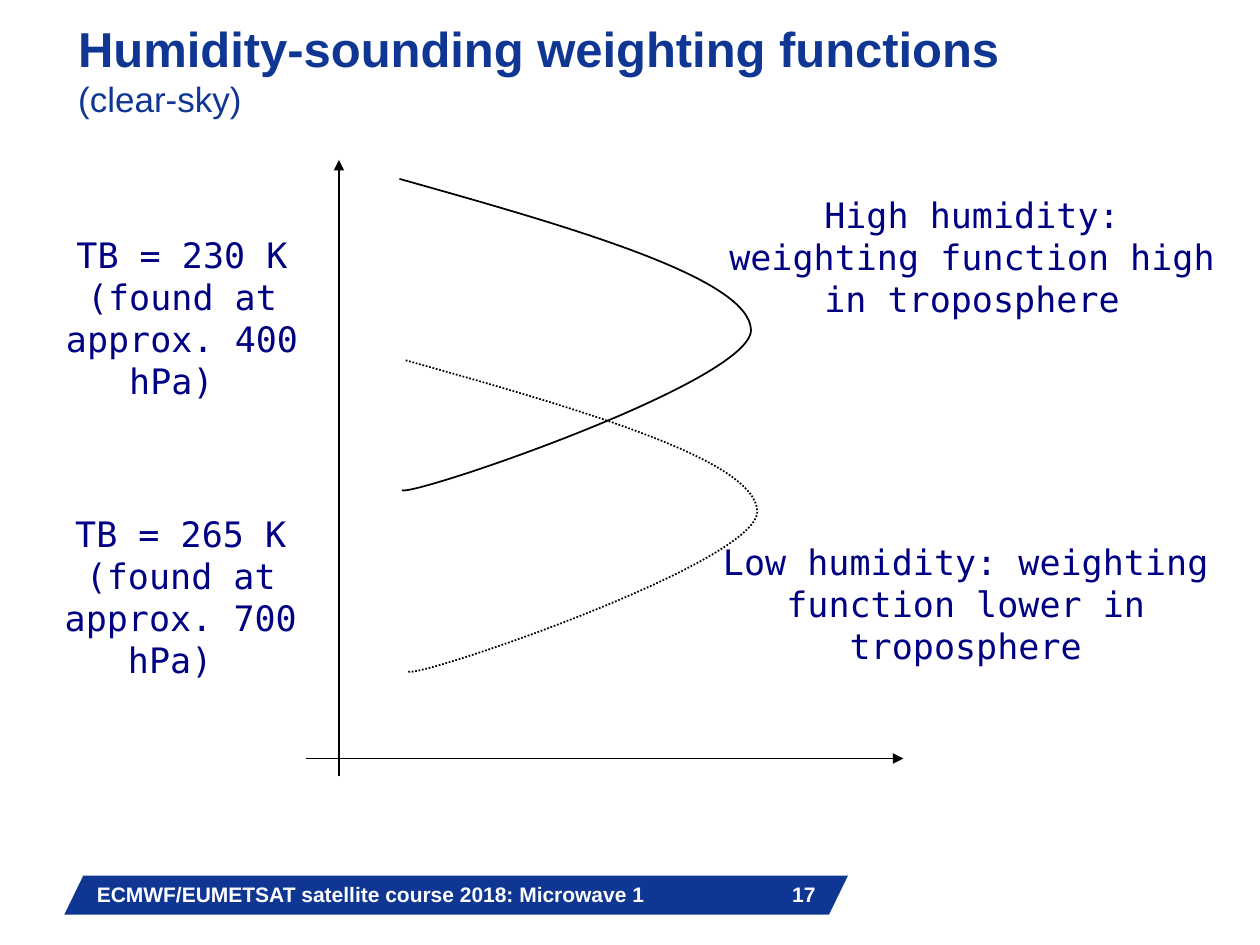
from lxml.etree import SubElement
from pptx import Presentation
from pptx.dml.color import RGBColor
from pptx.enum.dml import MSO_LINE
from pptx.enum.shapes import MSO_CONNECTOR, MSO_SHAPE
from pptx.enum.text import MSO_ANCHOR, MSO_AUTO_SIZE, PP_ALIGN
from pptx.oxml.ns import qn
from pptx.util import Inches, Pt

COLORS = {"brand": "0F3692", "label": "000082", "line": "000000", "light": "FFFFFF"}
CURVE_START = (3.17, 1.42)
CURVE_SEGMENTS = [
    [(4.56, 1.81), (5.95, 2.21), (5.96, 2.62)],
    [(5.96, 3.03), (3.25, 3.95), (3.19, 3.89)],
]
AXES = [((2.69, 6.16), (2.69, 1.27)), ((2.43, 6.02), (7.17, 6.02))]
LABELS = [
    ("High humidity: weighting function high in troposphere", 5.63, 1.49, 4.17, 0.77),
    ("Low humidity: weighting function lower in troposphere", 5.58, 4.24, 4.17, 0.77),
    ("TB = 230 K (found at approx. 400 hPa) ", 0.33, 1.8, 2.23, 1.45),
    ("TB = 265 K (found at approx. 700 hPa) ", 0.32, 4.02, 2.23, 1.45),
]


def color(name):
    return RGBColor.from_string(COLORS[name])


def add_run(paragraph, text, size=20, font="Arial", fill="brand", bold=False):
    run = paragraph.add_run()
    run.text = text
    run.font.size = Pt(size)
    run.font.name = font
    run.font.bold = bold
    run.font.color.rgb = color(fill)


def add_text(slide, text, left, top, width, height, align=PP_ALIGN.LEFT, **style):
    box = slide.shapes.add_textbox(Inches(left), Inches(top), Inches(width), Inches(height))
    box.text_frame.word_wrap = True
    paragraph = box.text_frame.paragraphs[0]
    paragraph.alignment = align
    add_run(paragraph, text, **style)


def set_title(slide):
    title = slide.shapes.title
    title.left, title.top = Inches(0.52), Inches(0.16)
    title.width, title.height = Inches(8.87), Inches(0.77)
    frame = title.text_frame
    frame.auto_size = MSO_AUTO_SIZE.NONE
    frame.vertical_anchor = MSO_ANCHOR.MIDDLE
    paragraph = frame.paragraphs[0]
    paragraph.alignment = PP_ALIGN.LEFT
    add_run(paragraph, "Humidity-sounding weighting functions ", size=28, bold=True)
    paragraph.add_line_break()
    add_run(paragraph, "(clear-sky)")


def add_footer(slide):
    band = slide.shapes.add_shape(
        MSO_SHAPE.PARALLELOGRAM, Inches(0.51), Inches(6.95), Inches(6.22), Inches(0.31)
    )
    band.adjustments[0] = 0.487
    band.shadow.inherit = False
    band.fill.solid()
    band.fill.fore_color.rgb = color("brand")
    band.line.fill.background()
    style = {"size": 12, "fill": "light", "bold": True}
    add_text(slide, "ECMWF/EUMETSAT satellite course 2018: Microwave 1", 0.67, 6.95, 4.65, 0.43, **style)
    add_text(slide, "17", 5.39, 6.95, 1.18, 0.43, align=PP_ALIGN.RIGHT, **style)


def add_axis(slide, start, end):
    axis = slide.shapes.add_connector(
        MSO_CONNECTOR.STRAIGHT, *(Inches(value) for value in start + end)
    )
    axis.line.color.rgb = color("line")
    axis.line.width = Pt(1)
    SubElement(axis.line._get_or_add_ln(), qn("a:tailEnd"), type="triangle")
    SubElement(axis._element.spPr, qn("a:effectLst"))


def bend_segments(curve, segments):
    outline = next(curve._element.iter(qn("a:path")))
    for straight in outline.findall(qn("a:lnTo")):
        outline.remove(straight)
    for segment in segments:
        bend = SubElement(outline, qn("a:cubicBezTo"))
        for x, y in segment:
            SubElement(bend, qn("a:pt"), x=str(x - curve.left), y=str(y - curve.top))


def add_weighting_curve(slide, shift_x=0, shift_y=0, dash=None):
    def place(point):
        return Inches(point[0] + shift_x), Inches(point[1] + shift_y)

    segments = [[place(point) for point in segment] for segment in CURVE_SEGMENTS]
    builder = slide.shapes.build_freeform(*place(CURVE_START))
    builder.add_line_segments([segment[-1] for segment in segments], close=False)
    curve = builder.convert_to_shape()
    bend_segments(curve, segments)
    curve.shadow.inherit = False
    curve.fill.background()
    curve.line.color.rgb = color("line")
    curve.line.width = Pt(1)
    if dash is not None:
        curve.line.dash_style = dash


def main():
    presentation = Presentation()
    presentation.slide_width, presentation.slide_height = Inches(10), Inches(7.5)
    slide = presentation.slides.add_slide(presentation.slide_layouts[5])
    add_footer(slide)
    set_title(slide)
    for start, end in AXES:
        add_axis(slide, start, end)
    add_weighting_curve(slide)
    add_weighting_curve(slide, shift_x=0.05, shift_y=1.44, dash=MSO_LINE.ROUND_DOT)
    for text, *place in LABELS:
        add_text(slide, text, *place, align=PP_ALIGN.CENTER, font="DejaVu Sans Mono", fill="label")
    presentation.save("out.pptx")


if __name__ == "__main__":
    main()
